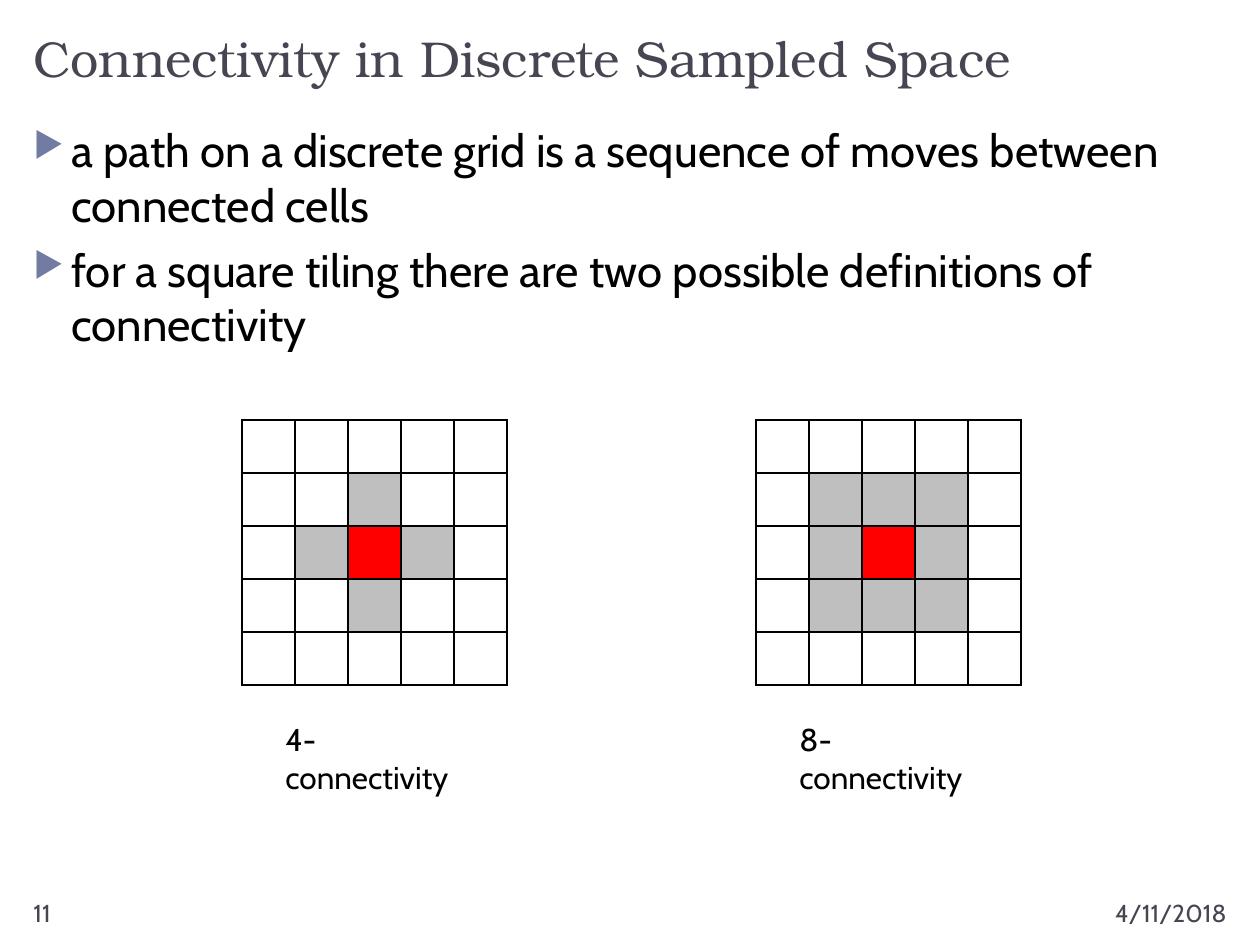
from lxml.etree import SubElement as add_element
from pptx import Presentation
from pptx.dml.color import RGBColor as Color
from pptx.enum.text import MSO_ANCHOR as Anchor, PP_ALIGN as Align
from pptx.oxml.ns import qn
from pptx.util import Emu, Pt

PX_PER_INCH = 126
COLORS = {
    "heading": "464653",
    "text": "000000",
    "bullet": "727CA3",
    "border": "000000",
    ".": "FFFFFF",
    "o": "BFBFBF",
    "x": "FF0000",
}
HEADING_FONT = "TeX Gyre Bonum"
BODY_FONT = "Cabin"
CELL = 53


def px(length):
    return Emu(round(length * 914400 / PX_PER_INCH))


class SlideBuilder:
    def __init__(self, slide):
        self.slide = slide

    def text(self, box, lines, size, color="text", font=BODY_FONT,
             align=Align.LEFT, anchor=Anchor.TOP):
        shape = self.slide.shapes.add_textbox(*map(px, box))
        frame = shape.text_frame
        frame.word_wrap = True
        frame.vertical_anchor = anchor
        frame.text = "\n".join(lines)
        for paragraph in frame.paragraphs:
            paragraph.alignment = align
            for run in paragraph.runs:
                run.font.size = Pt(size)
                run.font.name = font
                run.font.color.rgb = Color.from_string(COLORS[color])
        return frame

    def bullets(self, box, lines, size, indent):
        for paragraph in self.text(box, lines, size).paragraphs:
            paragraph.space_before = Pt(6)
            properties = paragraph._p.get_or_add_pPr()
            properties.set("marL", str(px(indent)))
            properties.set("indent", str(px(-indent)))
            color = add_element(properties, qn("a:buClr"))
            add_element(color, qn("a:srgbClr"), val=COLORS["bullet"])
            add_element(properties, qn("a:buSzPct"), val="76000")
            add_element(properties, qn("a:buChar"), char="▶")

    def grid(self, left, top, pattern):
        rows, columns = len(pattern), len(pattern[0])
        frame = self.slide.shapes.add_table(
            rows, columns, px(left), px(top), px(columns * CELL), px(rows * CELL))
        table = frame.table
        for column in table.columns:
            column.width = px(CELL)
        for row, marks in zip(table.rows, pattern):
            row.height = px(CELL)
            for cell, mark in zip(row.cells, marks):
                cell.margin_top = cell.margin_bottom = 0
                self.borders(cell)
                cell.fill.solid()
                cell.fill.fore_color.rgb = Color.from_string(COLORS[mark])

    def borders(self, cell):
        properties = cell._tc.get_or_add_tcPr()
        for side in ("lnL", "lnR", "lnT", "lnB"):
            line = add_element(properties, qn(f"a:{side}"), w=str(Pt(1)))
            fill = add_element(line, qn("a:solidFill"))
            add_element(fill, qn("a:srgbClr"), val=COLORS["border"])


def main():
    presentation = Presentation()
    presentation.slide_width = px(1260)
    presentation.slide_height = px(945)
    slide = presentation.slides.add_slide(presentation.slide_layouts[6])
    builder = SlideBuilder(slide)

    builder.text((21, 21, 1218, 73), ["Connectivity in Discrete Sampled Space"],
                 28.8, "heading", HEADING_FONT, anchor=Anchor.BOTTOM)
    builder.text((1008, 892, 231, 34), ["4/11/2018"], 14, "heading", align=Align.RIGHT)
    builder.text((21, 892, 273, 34), ["11"], 14, "heading")
    builder.bullets((21, 116, 1218, 756), [
        "a path on a discrete grid is a sequence of moves between connected cells",
        "for a square tiling there are two possible definitions of connectivity",
    ], 26, 38)

    neighbourhoods = [
        (242, "4-connectivity", (".....", "..o..", ".oxo.", "..o..", ".....")),
        (756, "8-connectivity", (".....", ".ooo.", ".oxo.", ".ooo.", ".....")),
    ]
    for left, label, pattern in neighbourhoods:
        builder.grid(left, 420, pattern)
        builder.text((left + 31, 714, 207, 50), [label], 18)

    presentation.save("out.pptx")


if __name__ == "__main__":
    main()
